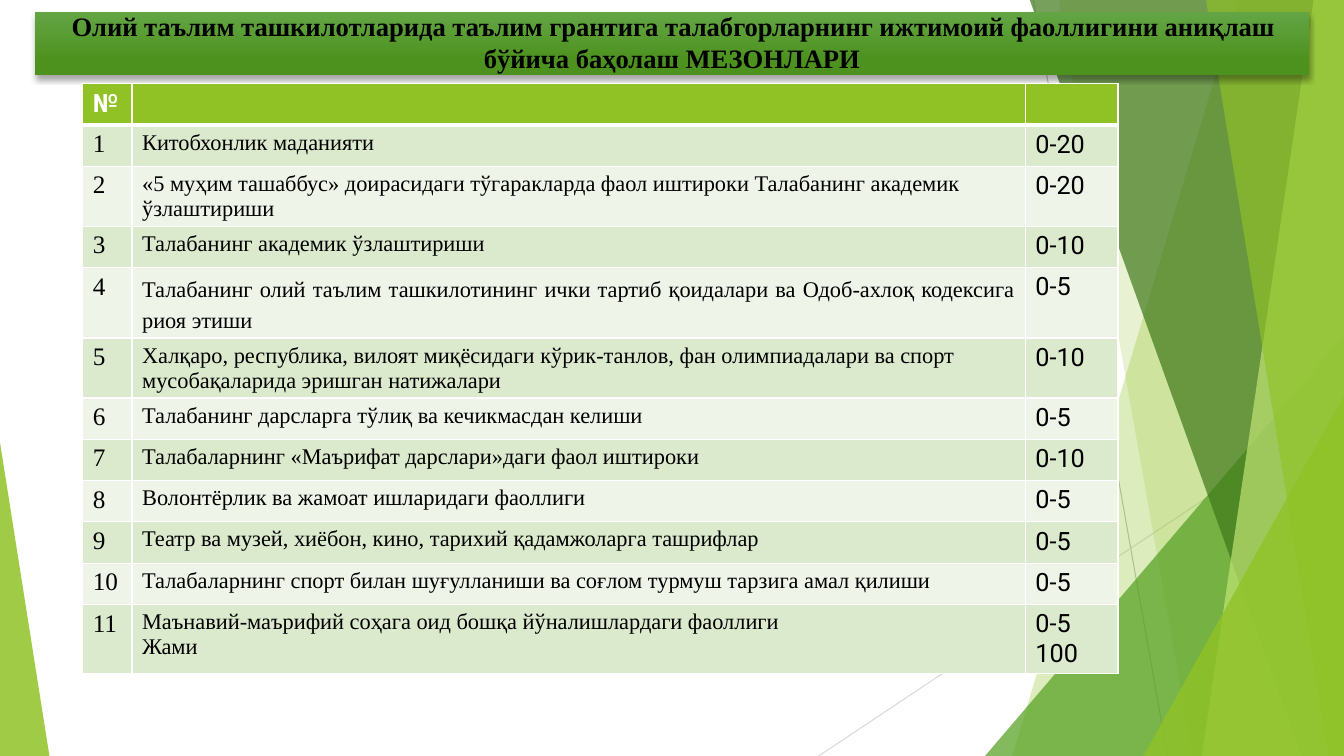
from dataclasses import dataclass
from typing import NamedTuple

from lxml import etree
from pptx import Presentation
from pptx.dml.color import RGBColor
from pptx.enum.shapes import MSO_CONNECTOR, MSO_SHAPE
from pptx.enum.text import MSO_ANCHOR, PP_ALIGN
from pptx.oxml import parse_xml
from pptx.oxml.ns import nsdecls, qn
from pptx.util import Inches, Pt

RECT = MSO_SHAPE.RECTANGLE
TRIANGLE = MSO_SHAPE.ISOSCELES_TRIANGLE
STRAIGHT = MSO_CONNECTOR.STRAIGHT
LEFT, CENTER, JUSTIFY = PP_ALIGN.LEFT, PP_ALIGN.CENTER, PP_ALIGN.JUSTIFY
MIDDLE = MSO_ANCHOR.MIDDLE


@dataclass(frozen=True)
class Theme:
    serif: str = "Times New Roman"
    sans: str = "Roboto"
    title: float = 19
    mark: float = 18
    body: float = 16
    ink: str = "000000"
    white: str = "FFFFFF"
    lime: str = "90C226"
    leaf: str = "54A021"
    pine: str = "3F7819"
    pale: str = "C0E474"
    top: str = "63A545"
    base: str = "4D921E"
    bands: tuple[str, str] = ("DBE9CD", "EEF4E8")


THEME = Theme()


class Ray(NamedTuple):
    start: tuple[float, float]
    end: tuple[float, float]
    color: str


class Shard(NamedTuple):
    """A band from the slide's right edge to a slanted left side."""
    top: float
    foot: float
    color: str
    alpha: int


class Wedge(NamedTuple):
    box: tuple[float, float, float, float]
    apex: float
    color: str
    alpha: int


class Rule(NamedTuple):
    text: str
    score: str
    align: PP_ALIGN = LEFT
    pitch: float | None = None


RAYS = [
    Ray((10.25, 0), (11.58, 7.5), "BFBFBF"),
    Ray((13.33, 4.03), (8.12, 7.5), "D9D9D9"),
]

# Back to front
DECOR = [
    Shard(12.28, 10.04, THEME.lime, 30),
    Shard(10.5, 11.83, THEME.lime, 20),
    Wedge((9.77, 3.33, 3.56, 4.17), 1, THEME.leaf, 72),
    Shard(10.21, 12.91, THEME.pine, 70),
    Shard(13.03, 11.92, THEME.pale, 70),
    Shard(11.96, 13.18, THEME.lime, 65),
    Wedge((11.34, 3.93, 1.99, 3.57), 1, THEME.lime, 80),
    Wedge((0, 4.39, 0.49, 3.11), 0, THEME.lime, 85),
]

TITLE = [
    "Олий таълим ташкилотларида таълим грантига талабгорларнинг ижтимоий фаоллигини аниқлаш",
    "бўйича баҳолаш МЕЗОНЛАРИ",
]

RULES = [
    Rule("Китобхонлик маданияти", "0-20"),
    Rule("«5 муҳим ташаббус» доирасидаги тўгаракларда фаол иштироки "
         "Талабанинг академик ўзлаштириши", "0-20"),
    Rule("Талабанинг академик ўзлаштириши", "0-10"),
    Rule("Талабанинг олий таълим ташкилотининг ички тартиб қоидалари ва "
         "Одоб-ахлоқ кодексига риоя этиши", "0-5", JUSTIFY, 21.6),
    Rule("Халқаро, республика, вилоят миқёсидаги кўрик-танлов, фан олимпиадалари "
         "ва спорт мусобақаларида эришган натижалари", "0-10"),
    Rule("Талабанинг дарсларга тўлиқ ва кечикмасдан келиши", "0-5"),
    Rule("Талабаларнинг «Маърифат дарслари»даги фаол иштироки", "0-10"),
    Rule("Волонтёрлик ва жамоат ишларидаги фаоллиги", "0-5"),
    Rule("Театр ва музей, хиёбон, кино, тарихий қадамжоларга ташрифлар", "0-5"),
    Rule("Талабаларнинг спорт билан шуғулланиши ва соғлом турмуш тарзига амал қилиши", "0-5"),
    Rule("Маънавий-маърифий соҳага оид бошқа йўналишлардаги фаоллиги\nЖами", "0-5\n100"),
]


def style(para, size: float, face: str, color: str, bold: bool = False) -> None:
    font = para.font
    font.size, font.name, font.bold = Pt(size), face, bold
    font.color.rgb = RGBColor.from_string(color)


def tint(shape, color: str, alpha: int) -> None:
    """Fill with a see-through colour, without outline or shadow."""
    shape.shadow.inherit = False
    shape.line.fill.background()
    shape.fill.solid()
    shape.fill.fore_color.rgb = RGBColor.from_string(color)
    tone = shape.fill._xPr.find(".//" + qn("a:srgbClr"))
    etree.SubElement(tone, qn("a:alpha")).set("val", str(alpha * 1000))


def add_ray(slide, ray: Ray) -> None:
    ends = [Inches(v) for v in (*ray.start, *ray.end)]
    line = slide.shapes.add_connector(STRAIGHT, *ends)
    line.line.width = Pt(0.75)
    line.line.color.rgb = RGBColor.from_string(ray.color)
    etree.SubElement(line._element.spPr, qn("a:effectLst"))


def add_shard(slide, shard: Shard) -> None:
    points = [(shard.top, -0.01), (13.33, -0.01), (13.33, 7.5), (shard.foot, 7.5)]
    first, *rest = [(Inches(x), Inches(y)) for x, y in points]
    pen = slide.shapes.build_freeform(*first)
    pen.add_line_segments(rest, close=True)
    tint(pen.convert_to_shape(), shard.color, shard.alpha)


def add_wedge(slide, wedge: Wedge) -> None:
    shape = slide.shapes.add_shape(TRIANGLE, *[Inches(v) for v in wedge.box])
    shape.adjustments[0] = wedge.apex
    tint(shape, wedge.color, wedge.alpha)


def add_title(slide) -> None:
    bar = slide.shapes.add_shape(RECT, Inches(0.35), Inches(0.12), Inches(12.63), Inches(0.62))
    bar.line.fill.background()
    bar.fill.gradient()
    bar.fill.gradient_angle = 270
    stops = zip(bar.fill.gradient_stops, (0, 0.78), (THEME.top, THEME.base))
    for stop, place, color in stops:
        stop.position = place
        stop.color.rgb = RGBColor.from_string(color)
    # Soft shadow below the bar
    bar._element.spPr.append(parse_xml(
        f'<a:effectLst {nsdecls("a")}><a:outerShdw blurRad="{Pt(4)}" dist="{Pt(3)}" '
        f'dir="5400000" rotWithShape="0"><a:srgbClr val="{THEME.ink}">'
        '<a:alpha val="35000"/></a:srgbClr></a:outerShdw></a:effectLst>'))
    frame = bar.text_frame
    frame.margin_left = frame.margin_right = frame.margin_top = frame.margin_bottom = 0
    frame.word_wrap, frame.vertical_anchor = True, MIDDLE
    frame.text = "\n".join(TITLE)
    for para, align in zip(frame.paragraphs, (LEFT, CENTER)):
        para.alignment, para.line_spacing = align, Pt(21)
        style(para, THEME.title, THEME.serif, THEME.ink, True)
    head = frame.paragraphs[0]
    head.space_after = Pt(2.1)
    head._p.get_or_add_pPr().set("marL", str(Inches(0.36)))


def paint(cell, color: str, top: float, base: float) -> None:
    """Give a cell white borders and a flat fill."""
    props = cell._tc.get_or_add_tcPr()
    for side, width in (("L", 1), ("R", 1), ("T", top), ("B", base)):
        props.append(parse_xml(
            f'<a:ln{side} {nsdecls("a")} w="{Pt(width)}"><a:solidFill>'
            f'<a:srgbClr val="{THEME.white}"/></a:solidFill></a:ln{side}>'))
    cell.fill.solid()
    cell.fill.fore_color.rgb = RGBColor.from_string(color)


def add_grid(slide) -> None:
    rows = len(RULES) + 1
    grid = slide.shapes.add_table(rows, 3, Inches(0.82), Inches(0.83),
                                  Inches(10.27), Inches(0.41 * rows)).table
    for col, width in zip(grid.columns, (0.49, 8.86, 0.92)):
        col.width = Inches(width)
    for row in grid.rows:
        row.height = Inches(0.41)
    # Header row
    for cell in grid.rows[0].cells:
        paint(cell, THEME.lime, 1, 3)
    grid.cell(0, 0).text = "№"
    style(grid.cell(0, 0).text_frame.paragraphs[0], THEME.mark, THEME.sans, THEME.white, True)
    # Criteria rows
    looks = ((THEME.mark, THEME.serif), (THEME.body, THEME.serif), (THEME.mark, THEME.sans))
    for num, rule in enumerate(RULES, 1):
        texts = (str(num), rule.text, rule.score)
        for cell, text, look in zip(grid.rows[num].cells, texts, looks):
            paint(cell, THEME.bands[(num - 1) % 2], 3 if num == 1 else 1, 1)
            cell.text = text
            for para in cell.text_frame.paragraphs:
                style(para, *look, THEME.ink)
        if rule.pitch:
            para = grid.cell(num, 1).text_frame.paragraphs[0]
            para.alignment, para.line_spacing = rule.align, Pt(rule.pitch)


def main() -> None:
    deck = Presentation()
    deck.slide_width, deck.slide_height = Inches(13.33), Inches(7.5)
    slide = deck.slides.add_slide(deck.slide_layouts[6])
    for ray in RAYS:
        add_ray(slide, ray)
    for part in DECOR:
        if isinstance(part, Shard):
            add_shard(slide, part)
        else:
            add_wedge(slide, part)
    add_title(slide)
    add_grid(slide)
    deck.save("out.pptx")


if __name__ == "__main__":
    main()
